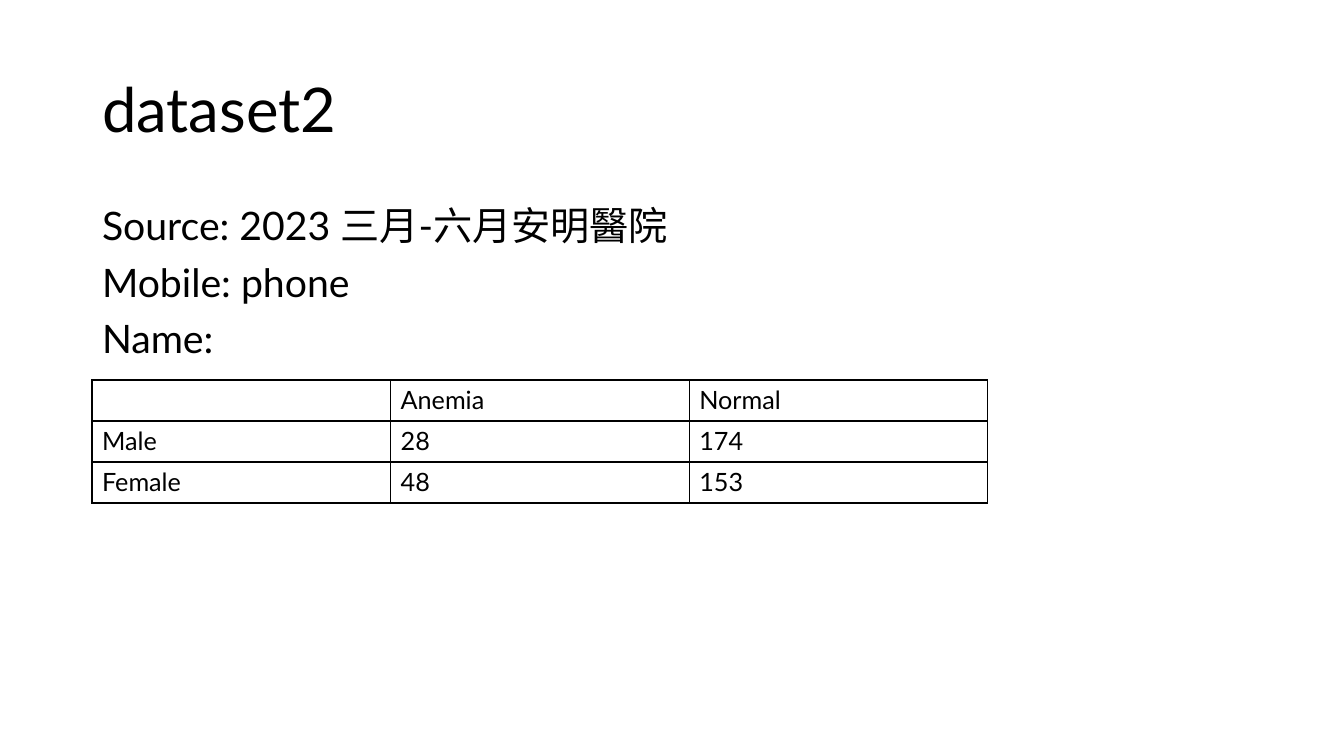
from lxml import etree
from pptx import Presentation
from pptx import util as u
from pptx.dml.color import RGBColor
from pptx.enum import text
from pptx.oxml import ns

PX = 914400 / 100.8
FONT = "Lato"
BLACK = "000000"


def px(length):
    return u.Emu(round(length * PX))


def colour(hex_value):
    return RGBColor.from_string(hex_value)


def place(shape, box):
    for name, length in zip(("left", "top", "width", "height"), box):
        setattr(shape, name, px(length))


def write(para, words, size, **layout):
    span = para.add_run()
    span.text = words
    for name, value in {"name": FONT, "size": u.Pt(size), "bold": False}.items():
        setattr(span.font, name, value)
    span.font.color.rgb = colour(BLACK)
    for name, value in {"alignment": text.PP_ALIGN.LEFT, **layout}.items():
        setattr(para, name, value)


def add_title(page, box, words):
    title = page.shapes.title
    place(title, box)
    frame = title.text_frame
    frame.auto_size = text.MSO_AUTO_SIZE.NONE
    frame.vertical_anchor = text.MSO_ANCHOR.MIDDLE
    write(frame.paragraphs[0], words, 44, line_spacing=0.9)


def add_details(page, box, lines):
    body = page.placeholders[1]
    place(body, box)
    frame = body.text_frame
    frame.auto_size = text.MSO_AUTO_SIZE.NONE
    for index, line in enumerate(lines):
        para = frame.add_paragraph() if index else frame.paragraphs[0]
        write(para, line, 28, line_spacing=0.9, space_before=u.Pt(10))
        properties = para._p.get_or_add_pPr()
        properties.set("marL", "0")
        properties.set("indent", "0")
        etree.SubElement(properties, ns.qn("a:buNone"))


def outline(cell):
    """Draw a 1 pt line on all four sides of the cell."""
    properties = cell._tc.get_or_add_tcPr()
    for index, side in enumerate(("lnL", "lnR", "lnT", "lnB")):
        line = etree.Element(ns.qn(f"a:{side}"), w=str(u.Pt(1)))
        fill = etree.SubElement(line, ns.qn("a:solidFill"))
        etree.SubElement(fill, ns.qn("a:srgbClr"), val=BLACK)
        properties.insert(index, line)


def add_counts(page, box, rows):
    left, top, width, height = map(px, box)
    table = page.shapes.add_table(
        len(rows), len(rows[0]), left, top, width, height).table
    table.first_row = table.horz_banding = False
    for row, values in enumerate(rows):
        for column, value in enumerate(values):
            cell = table.cell(row, column)
            cell.fill.background()
            outline(cell)
            if value:
                write(cell.text_frame.paragraphs[0], value, 18)


def main():
    deck = Presentation()
    deck.slide_width, deck.slide_height = px(1344), px(756)
    page = deck.slides.add_slide(deck.slide_layouts[1])
    add_title(page, (92, 40, 1159, 146), "dataset2")
    add_details(page, (92, 202, 1159, 480), (
        "Source: 2023 三月-六月安明醫院",
        "Mobile: phone",
        "Name:",
    ))
    add_counts(page, (92, 380, 896, 123), (
        ("", "Anemia", "Normal"),
        ("Male", "28", "174"),
        ("Female", "48", "153"),
    ))
    deck.save("out.pptx")


if __name__ == "__main__":
    main()
